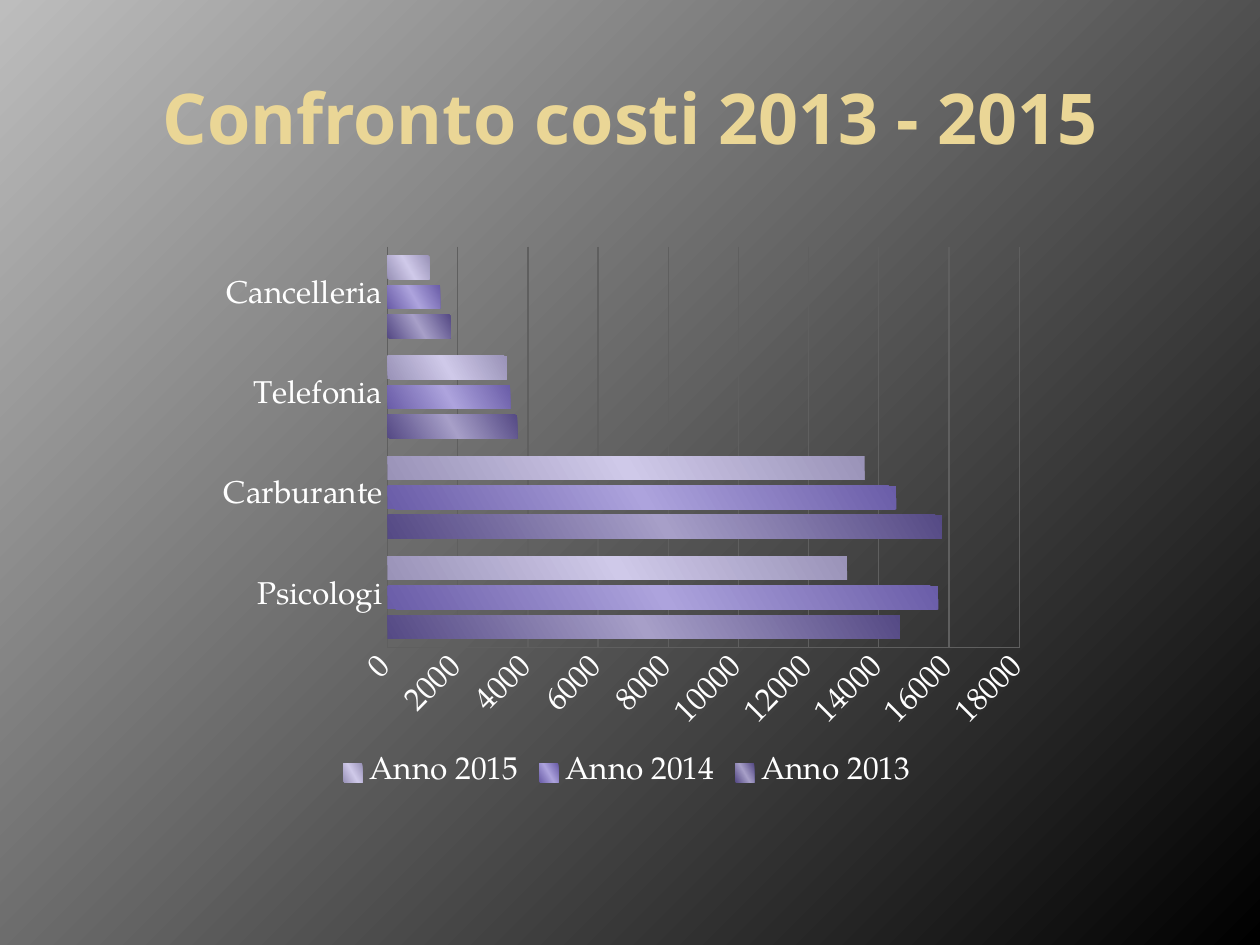
from lxml.etree import SubElement
from pptx import Presentation
from pptx.chart.data import CategoryChartData
from pptx.dml.color import RGBColor
from pptx.enum.chart import XL_CHART_TYPE, XL_LEGEND_POSITION, XL_TICK_MARK
from pptx.enum.text import MSO_ANCHOR, PP_ALIGN
from pptx.oxml.ns import qn
from pptx.util import Cm, Pt

GOLD = RGBColor(0xEA, 0xD6, 0x96)
WHITE = RGBColor(0xFF, 0xFF, 0xFF)
GRID_GREY = RGBColor(0x5F, 0x5F, 0x5F)
SILVER = RGBColor(0xBD, 0xBD, 0xBD)
BLACK = RGBColor(0x00, 0x00, 0x00)

CATEGORIES = ["Psicologi", "Carburante", "Telefonia", "Cancelleria"]
# year label, costs, edge colour, middle colour
YEARS = [
    ("Anno 2013", (14600, 15800, 3700, 1800),
     RGBColor(0x55, 0x4A, 0x85), RGBColor(0xA7, 0x9F, 0xC8)),
    ("Anno 2014", (15700, 14500, 3500, 1500),
     RGBColor(0x6A, 0x5D, 0xA8), RGBColor(0xAD, 0xA3, 0xDD)),
    ("Anno 2015", (13100, 13600, 3400, 1200),
     RGBColor(0x9A, 0x93, 0xB8), RGBColor(0xCF, 0xC9, 0xE9)),
]


def set_gradient_stops(gradient, colors):
    """Replace the stops of a gradFill element by evenly spaced colours."""
    stops = gradient.find(qn("a:gsLst"))
    for stop in list(stops):
        stops.remove(stop)
    for index, color in enumerate(colors):
        position = 100000 * index // (len(colors) - 1)
        stop = SubElement(stops, qn("a:gs"), pos=str(position))
        SubElement(stop, qn("a:srgbClr"), val=str(color))


def paint_background(page):
    """Fade from the top left corner to the bottom right one."""
    page.background.fill.gradient()
    gradient = page.element.find(".//" + qn("a:gradFill"))
    set_gradient_stops(gradient, [SILVER, BLACK])
    gradient.remove(gradient.find(qn("a:lin")))
    shade = SubElement(gradient, qn("a:path"), path="circle")
    SubElement(shade, qn("a:fillToRect"), r="100000", b="100000")


def place_title(page, left, top, width, height):
    title = page.shapes.title
    title.left, title.top, title.width, title.height = left, top, width, height
    frame = title.text_frame
    frame.word_wrap = True
    frame.vertical_anchor = MSO_ANCHOR.MIDDLE
    para = frame.paragraphs[0]
    para.alignment = PP_ALIGN.CENTER
    span = para.add_run()
    span.text = "Confronto costi 2013 - 2015"
    span.font.name = "Noto Sans"
    span.font.size = Pt(40)
    span.font.bold = True
    span.font.color.rgb = GOLD


def format_axes(chart):
    for axis in (chart.category_axis, chart.value_axis):
        axis.major_tick_mark = XL_TICK_MARK.NONE
        axis.minor_tick_mark = XL_TICK_MARK.NONE
        axis.format.line.color.rgb = GRID_GREY
        axis.format.line.width = Pt(0.75)
    costs = chart.value_axis
    costs.minimum_scale, costs.maximum_scale = 0, 18000
    costs.major_unit = 2000
    costs.has_major_gridlines = True
    costs.major_gridlines.format.line.color.rgb = GRID_GREY
    costs.major_gridlines.format.line.width = Pt(0.75)


def place_cost_chart(page, left, top, width, height):
    data = CategoryChartData(number_format="General")
    data.categories = CATEGORIES
    for name, costs, _, _ in YEARS:
        data.add_series(name, costs)
    chart = page.shapes.add_chart(
        XL_CHART_TYPE.BAR_CLUSTERED, left, top, width, height, data).chart
    chart.has_title = False
    chart.font.name = "TeX Gyre Pagella"
    chart.font.size = Pt(18)
    chart.font.color.rgb = WHITE
    chart.has_legend = True
    chart.legend.position = XL_LEGEND_POSITION.BOTTOM
    chart.legend.include_in_layout = False
    format_axes(chart)

    plot = chart.plots[0]
    plot.vary_by_categories = False
    plot.gap_width = 75
    plot.overlap = -25
    for series, (_, _, edge, middle) in zip(plot.series, YEARS):
        series.format.fill.gradient()
        series.format.fill.gradient_angle = 30
        series.format.line.fill.background()
        gradient = series._element.find(".//" + qn("a:gradFill"))
        set_gradient_stops(gradient, [edge, middle, edge])


def main():
    deck = Presentation()
    deck.slide_width, deck.slide_height = Cm(25.4), Cm(19.05)
    page = deck.slides.add_slide(deck.slide_layouts[5])
    paint_background(page)
    place_title(page, Cm(1.27), Cm(0.76), Cm(22.86), Cm(3.18))
    place_cost_chart(page, Cm(4.17), Cm(4.75), Cm(16.94), Cm(11.28))
    deck.save("out.pptx")


if __name__ == "__main__":
    main()
